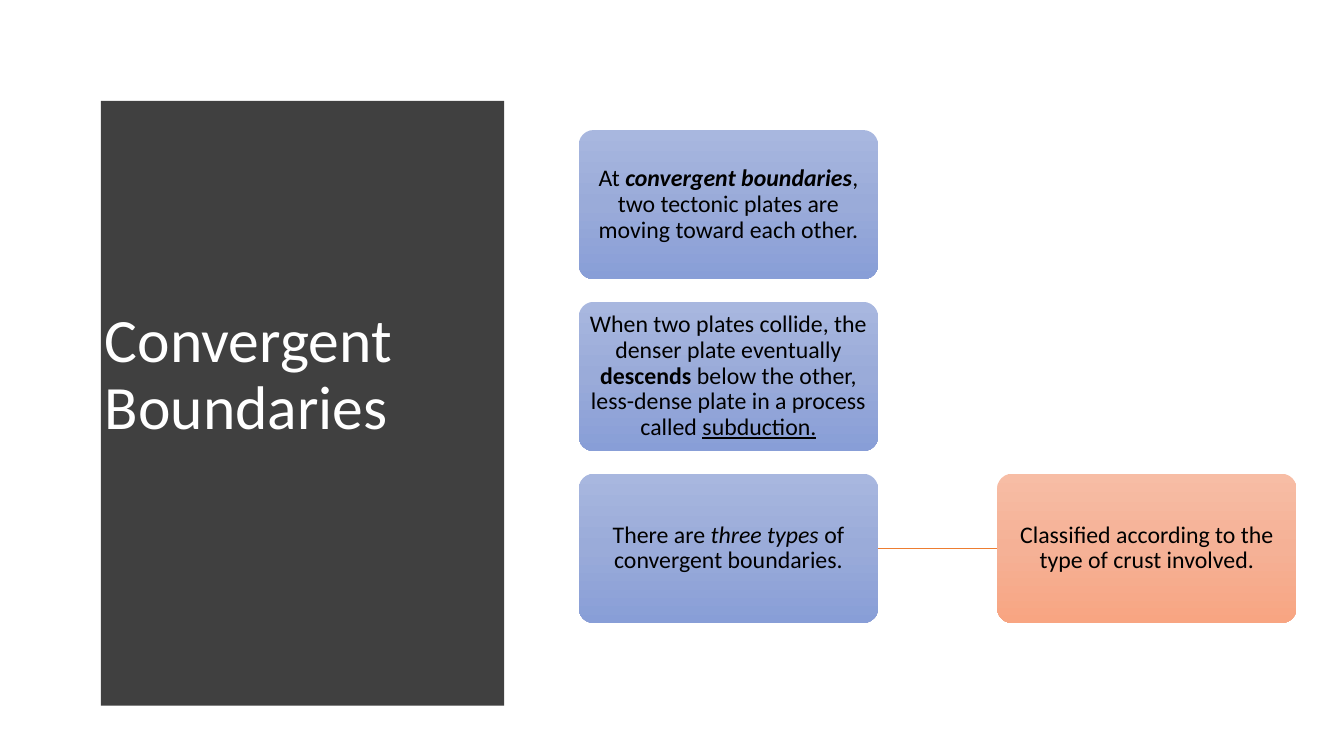
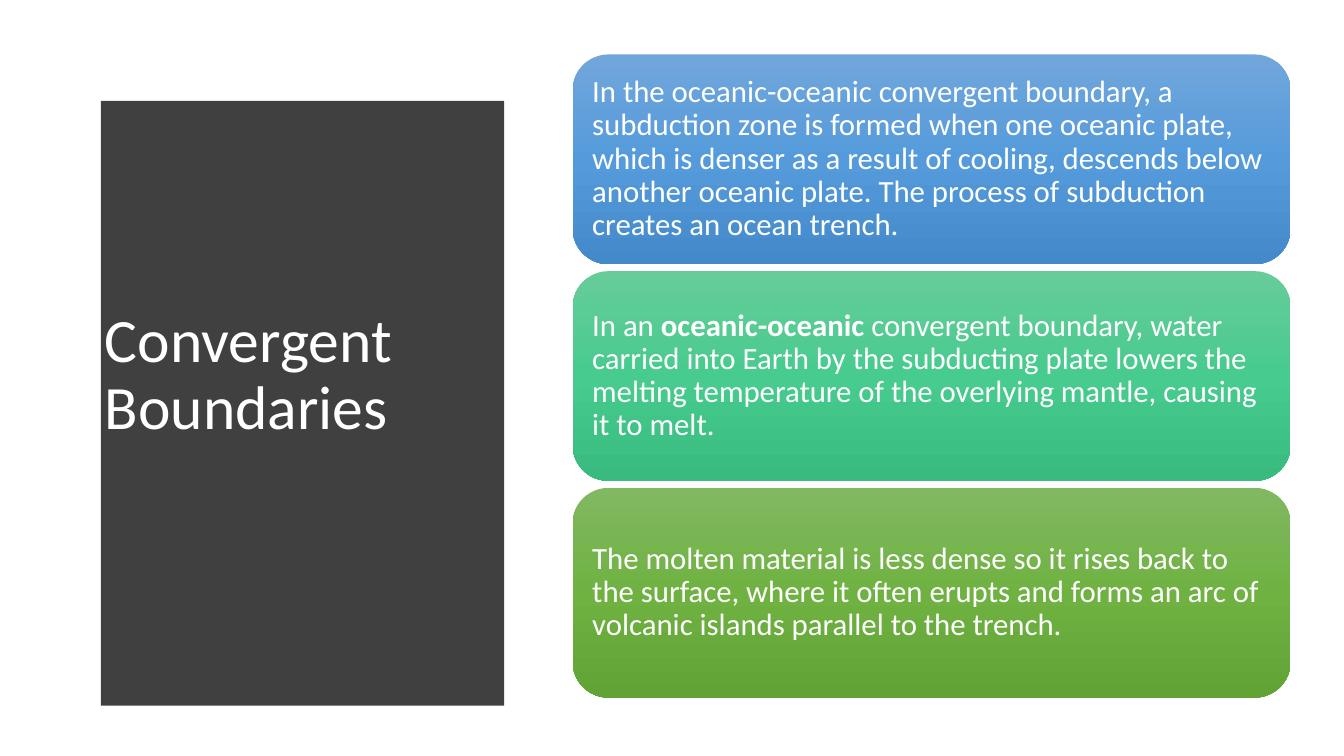
from copy import deepcopy
from dataclasses import dataclass

from lxml import etree
from pptx import Presentation
from pptx.dml.color import RGBColor
from pptx.enum.shapes import MSO_CONNECTOR, MSO_SHAPE
from pptx.enum.text import MSO_ANCHOR, MSO_AUTO_SIZE, PP_ALIGN
from pptx.oxml.ns import qn
from pptx.util import Inches, Pt

ROUND_RECT = MSO_SHAPE.ROUNDED_RECTANGLE
STRAIGHT = MSO_CONNECTOR.STRAIGHT
LEFT, CENTER = PP_ALIGN.LEFT, PP_ALIGN.CENTER
MIDDLE = MSO_ANCHOR.MIDDLE
NO_AUTOFIT = MSO_AUTO_SIZE.NONE
SIDE_LEFT, SIDE_RIGHT = 1, 3
TITLE_ONLY = 5

FONT = "Calibri"
WHITE = RGBColor(0xFF, 0xFF, 0xFF)
BLACK = RGBColor(0x00, 0x00, 0x00)
CHARCOAL = RGBColor(0x40, 0x40, 0x40)
ORANGE = RGBColor(0xED, 0x7D, 0x31)
# Gradients from top to bottom
PERIWINKLE = (RGBColor(0xA8, 0xB7, 0xDF), RGBColor(0x9A, 0xAB, 0xD9), RGBColor(0x88, 0x9E, 0xD7))
PEACH = (RGBColor(0xF7, 0xBD, 0xA5), RGBColor(0xF5, 0xB1, 0x96), RGBColor(0xF8, 0xA5, 0x82))
SKY = (RGBColor(0x71, 0xA6, 0xDB), RGBColor(0x55, 0x9B, 0xDB), RGBColor(0x44, 0x8A, 0xCA))
MINT = (RGBColor(0x67, 0xCC, 0x9A), RGBColor(0x47, 0xCB, 0x8E), RGBColor(0x39, 0xBB, 0x7F))
LEAF = (RGBColor(0x81, 0xB8, 0x61), RGBColor(0x6F, 0xB2, 0x42), RGBColor(0x62, 0xA3, 0x36))


@dataclass
class Grid:
    """Equal cells spread over an area, in inches; the gaps follow from the rest."""
    left: float
    top: float
    width: float
    height: float
    cell_w: float
    cell_h: float
    cols: int
    rows: int

    def cell(self, col, row):
        step_x = (self.width - self.cell_w) / max(self.cols - 1, 1)
        step_y = (self.height - self.cell_h) / max(self.rows - 1, 1)
        box = (self.left + col * step_x, self.top + row * step_y, self.cell_w, self.cell_h)
        return [Inches(v) for v in box]


@dataclass
class CardStyle:
    size: int
    color: RGBColor
    align: PP_ALIGN
    inset: float
    corner: float


TYPE_GRID = Grid(5.74, 1.29, 7.12, 4.89, 2.97, 1.48, cols=2, rows=3)
STORY_GRID = Grid(5.68, 0.54, 7.12, 6.38, 7.12, 2.08, cols=1, rows=3)
TYPE_CARD = CardStyle(17, BLACK, CENTER, inset=0.01, corner=0.1)
STORY_CARD = CardStyle(22, WHITE, LEFT, inset=0.09, corner=0.17)


class Deck:
    def __init__(self):
        self.prs = Presentation()
        self.prs.slide_width, self.prs.slide_height = Inches(13.33), Inches(7.5)
        self.s = None

    def slide(self, title):
        self.s = self.prs.slides.add_slide(self.prs.slide_layouts[TITLE_ONLY])
        self.panel()
        self.title(title)

    def panel(self, left=0.53, top=0.52, corner=5.08, bulge=0.24, bottom=6.96, steps=40):
        """Dark panel behind the title, its right edge bowed as a parabola."""
        edge = []
        for i in range(steps + 1):
            t = i / steps
            edge.append((corner + bulge * 4 * t * (1 - t), top + (bottom - top) * t))
        builder = self.s.shapes.build_freeform(left, top, scale=Inches(1))
        builder.add_line_segments(edge + [(left, bottom)], close=True)
        sp = builder.convert_to_shape()
        sp.shadow.inherit = False
        sp.fill.solid()
        sp.fill.fore_color.rgb = CHARCOAL
        sp.line.fill.background()
        title = self.s.shapes.title._element
        title.addprevious(sp._element)

    def title(self, text):
        sp = self.s.shapes.title
        sp.left, sp.top, sp.width, sp.height = [Inches(v) for v in (0.94, 1.11, 3.74, 5.24)]
        tf = sp.text_frame
        tf.auto_size = NO_AUTOFIT
        self.paragraph(tf, [(text, "")], 44, WHITE, LEFT)

    def paragraph(self, tf, runs, size, color, align):
        """Fill one paragraph; each run has flags out of b, i and u."""
        tf.word_wrap = True
        tf.vertical_anchor = MIDDLE
        p = tf.paragraphs[0]
        p.alignment, p.line_spacing = align, 0.9
        p.font.name, p.font.size = FONT, Pt(size)
        p.font.color.rgb = color
        for text, flags in runs:
            r = p.add_run()
            r.text = text
            if "b" in flags:
                r.font.bold = True
            if "i" in flags:
                r.font.italic = True
            if "u" in flags:
                r.font.underline = True

    def card(self, box, runs, colors, style):
        sp = self.s.shapes.add_shape(ROUND_RECT, *box)
        sp.adjustments[0] = style.corner
        sp.shadow.inherit = False
        sp.line.fill.background()
        self.gradient(sp, colors)
        tf = sp.text_frame
        tf.margin_left = tf.margin_right = tf.margin_top = tf.margin_bottom = Inches(style.inset)
        self.paragraph(tf, runs, style.size, style.color, style.align)
        return sp

    def gradient(self, sp, colors):
        """Spread the colours evenly from top to bottom."""
        sp.fill.gradient()
        sp.fill.gradient_angle = 270
        stop_list = sp._element.spPr.find(".//" + qn("a:gsLst"))
        while len(stop_list) < len(colors):
            stop_list.append(deepcopy(stop_list[0]))
        for i, (stop, color) in enumerate(zip(sp.fill.gradient_stops, colors)):
            stop.position = i / (len(colors) - 1)
            stop.color.rgb = color

    def link(self, start, end, color):
        line = self.s.shapes.add_connector(STRAIGHT, 0, 0, 0, 0)
        line.begin_connect(start, SIDE_RIGHT)
        line.end_connect(end, SIDE_LEFT)
        line.line.color.rgb = color
        line.line.width = Pt(1)
        etree.SubElement(line._element.spPr, qn("a:effectLst"))


def boundary_types(deck):
    deck.slide("Convergent Boundaries")
    statements = [
        [("At ", ""), ("convergent boundaries", "bi"),
         (", two tectonic plates are moving toward each other.", "")],
        [("When two plates collide, the denser plate eventually ", ""), ("descends ", "b"),
         ("below the other, less-dense plate in a process called ", ""), ("subduction.", "u")],
        [("There are ", ""), ("three types ", "i"), ("of convergent boundaries.", "")],
    ]
    cards = [deck.card(TYPE_GRID.cell(0, row), runs, PERIWINKLE, TYPE_CARD)
             for row, runs in enumerate(statements)]
    detail = deck.card(TYPE_GRID.cell(1, 2),
                       [("Classified according to the type of crust involved.", "")],
                       PEACH, TYPE_CARD)
    deck.link(cards[-1], detail, ORANGE)


def oceanic_story(deck):
    deck.slide("Convergent Boundaries")
    stages = [
        (SKY, [("In the oceanic-oceanic convergent boundary, a subduction zone is formed when "
                "one oceanic plate, which is denser as a result of cooling, descends below "
                "another oceanic plate. The process of subduction creates an ocean trench.", "")]),
        (MINT, [("In an ", ""), ("oceanic-oceanic", "b"),
                (" convergent boundary, water carried into Earth by the subducting plate lowers "
                 "the melting temperature of the overlying mantle, causing it to melt.", "")]),
        (LEAF, [("The molten material is less dense so it rises back to the surface, where it "
                 "often erupts and forms an arc of volcanic islands parallel to the trench.", "")]),
    ]
    for row, (colors, runs) in enumerate(stages):
        deck.card(STORY_GRID.cell(0, row), runs, colors, STORY_CARD)


def main():
    deck = Deck()
    boundary_types(deck)
    oceanic_story(deck)
    deck.prs.save("out.pptx")


if __name__ == "__main__":
    main()
